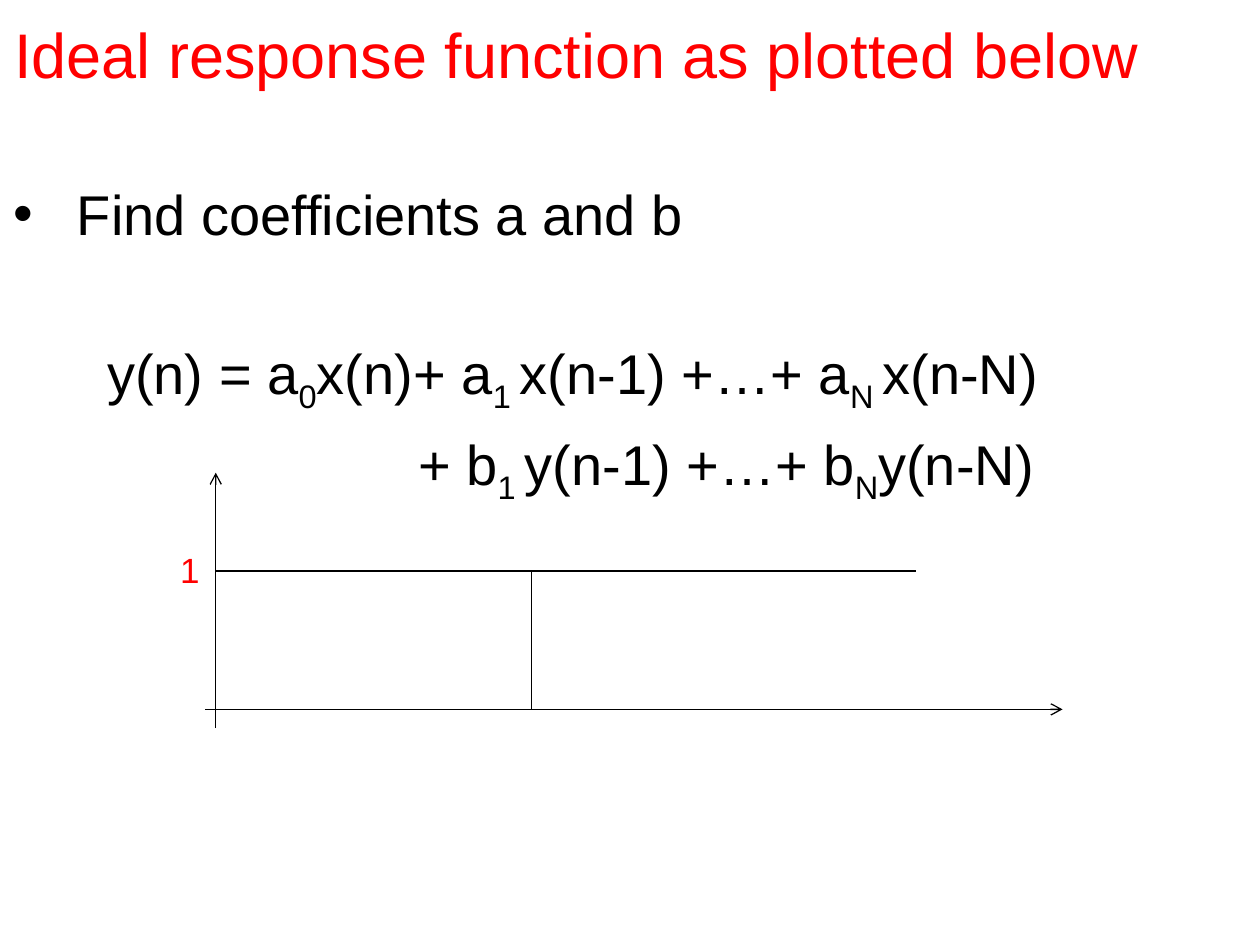
from lxml import etree
from pptx import Presentation
from pptx import util as u
from pptx.dml.color import RGBColor
from pptx.enum import shapes, text
from pptx.oxml.ns import qn

COLORS = {"accent": "FF0000", "ink": "000000"}
FONT = "Arial"
TITLE_ONLY = 5

# Each paragraph: left margin (cm), space before (pt), bullet, runs;
# a run that starts with "_" is a subscript
BODY = [
    (1.27, 0, True, ["Find coefficients a and b"]),
    (1.88, 52.3, False,
     ["y(n) = a", "_0", "x(n)+ a", "_1 ", "x(n-1) +…+ a", "_N ", "x(n-N)"]),
    (8.15, 8.4, False,
     ["+ b", "_1 ", "y(n-1) +…+ b", "_N", "y(n-N)"]),
]


def place(shape, left, top, width, height):
    position = dict(left=left, top=top, width=width, height=height)
    for name, value in position.items():
        setattr(shape, name, u.Cm(value))


def format_frame(frame, wrap=True):
    settings = dict(word_wrap=wrap, auto_size=text.MSO_AUTO_SIZE.NONE,
                    vertical_anchor=text.MSO_ANCHOR.TOP)
    for name, value in settings.items():
        setattr(frame, name, value)


def add_run(paragraph, words, size, color):
    run = paragraph.add_run()
    run.text = words
    for name, value in dict(name=FONT, size=u.Pt(size)).items():
        setattr(run.font, name, value)
    run.font.color.rgb = RGBColor.from_string(COLORS[color])
    return run


def add_title(slide, left, top, width, height):
    title = slide.shapes.title
    place(title, left, top, width, height)
    format_frame(title.text_frame)
    paragraph = title.text_frame.paragraphs[0]
    paragraph.alignment = text.PP_ALIGN.LEFT
    add_run(paragraph, "Ideal response function as plotted below", 36, "accent")


def add_body(slide, left, top, width, height):
    box = slide.shapes.add_textbox(*map(u.Cm, (left, top, width, height)))
    frame = box.text_frame
    format_frame(frame)
    for index, (margin, space, bullet, runs) in enumerate(BODY):
        paragraph = frame.add_paragraph() if index else frame.paragraphs[0]
        paragraph.space_before = u.Pt(space)
        properties = paragraph._p.get_or_add_pPr()
        properties.set("marL", str(u.Cm(margin)))
        if bullet:
            properties.set("indent", str(-u.Cm(margin)))
            etree.SubElement(properties, qn("a:buFont")).set("typeface", FONT)
            etree.SubElement(properties, qn("a:buChar")).set("char", "•")
        for words in runs:
            run = add_run(paragraph, words.removeprefix("_"), 32, "ink")
            if words.startswith("_"):
                run.font._element.set("baseline", "-25000")


def add_line(slide, start, end, arrow=False):
    line = slide.shapes.add_connector(
        shapes.MSO_CONNECTOR.STRAIGHT, *map(u.Cm, (*start, *end)))
    line.line.width = u.Pt(0.75)
    line.line.color.rgb = RGBColor.from_string(COLORS["ink"])
    if arrow:
        etree.SubElement(line.line._get_or_add_ln(), qn("a:tailEnd")).set("type", "arrow")
    etree.SubElement(line._element.spPr, qn("a:effectLst"))


def add_plot(slide, left, top, width, height):
    """Response plot; the box spans the two axes."""
    right, bottom = left + width, top + height
    origin_x, origin_y = left + 0.21, bottom - 0.38
    level, cutoff = origin_y - 2.79, origin_x + 6.37

    # Axes
    add_line(slide, (left, origin_y), (right, origin_y), arrow=True)
    add_line(slide, (origin_x, bottom), (origin_x, top), arrow=True)
    # Unit level and cutoff
    add_line(slide, (origin_x, level), (right - 2.95, level))
    add_line(slide, (cutoff, level), (cutoff, origin_y))
    # Level label
    label = slide.shapes.add_textbox(
        *map(u.Cm, (origin_x - 0.97, level - 0.58, 0.91, 1.11)))
    format_frame(label.text_frame, wrap=False)
    add_run(label.text_frame.paragraphs[0], "1", 20, "accent")


def main():
    presentation = Presentation()
    presentation.slide_width, presentation.slide_height = u.Cm(25.4), u.Cm(19.05)
    slide = presentation.slides.add_slide(presentation.slide_layouts[TITLE_ONLY])
    add_title(slide, 0.03, 0.18, 25.37, 2)
    add_body(slide, 0.03, 3.5, 25.37, 7)
    add_plot(slide, 4.14, 9.53, 17.28, 5.15)
    presentation.save("out.pptx")


if __name__ == "__main__":
    main()
